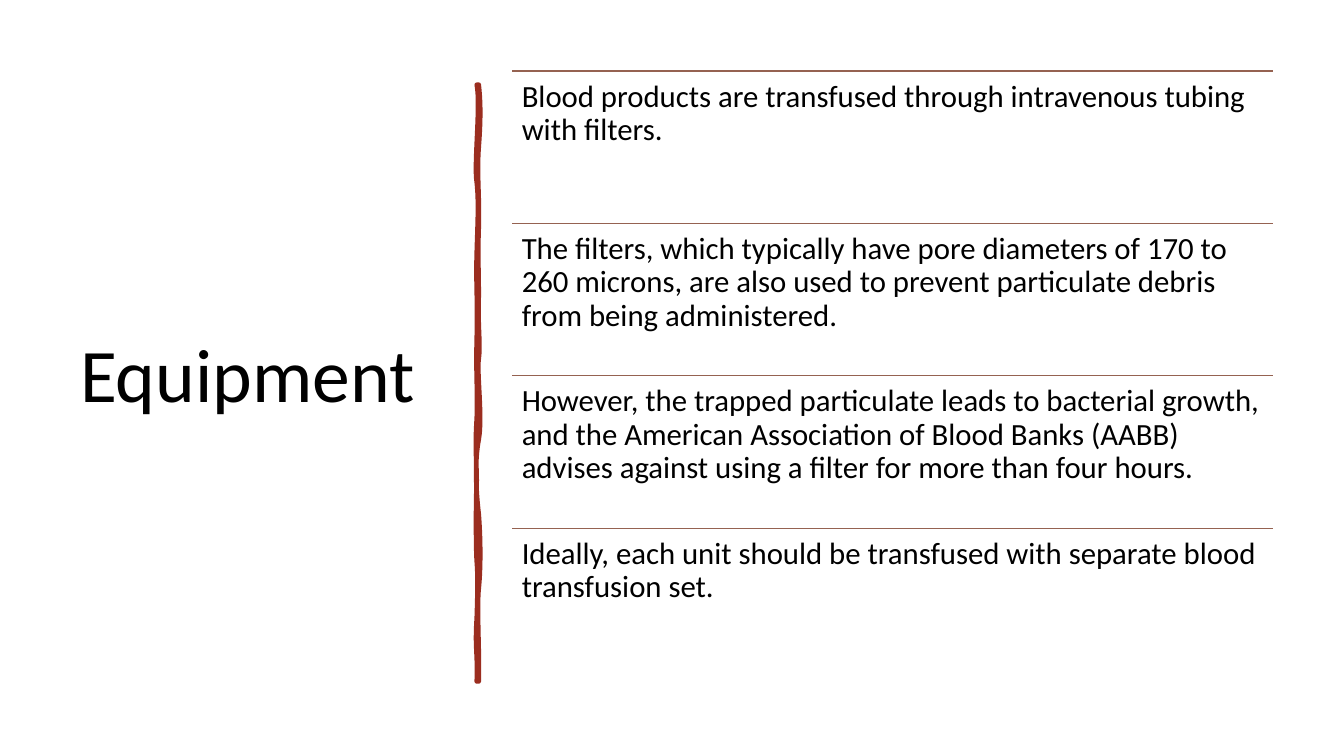
import dataclasses
import typing

import lxml.etree
import pptx
import pptx.dml.color
import pptx.enum.shapes
import pptx.enum.text
import pptx.oxml.ns
import pptx.util

Cm = pptx.util.Cm
Pt = pptx.util.Pt
RGB = pptx.dml.color.RGBColor
qn = pptx.oxml.ns.qn


@dataclasses.dataclass(frozen=True)
class Theme:
    font: str = "Calibri"
    ink: RGB = RGB(0x00, 0x00, 0x00)
    brush: RGB = RGB(0x9B, 0x2D, 0x1F)
    rule: RGB = RGB(0x95, 0x62, 0x51)
    title: float = 54
    body: float = 22


class Box(typing.NamedTuple):
    left: float
    top: float
    width: float
    height: float


class Bend(typing.NamedTuple):
    """One cubic curve of the bar, in hundredths of an inch."""
    x1: int
    y1: int
    x2: int
    y2: int
    x: int
    y: int


THEME = Theme()
TITLE = Box(1.77, 1.76, 9.5, 15.52)
FIRST = Box(12.91, 1.79, 19.18, 3.84)
INSET = 0.24
POINTS = [
    "Blood products are transfused through intravenous tubing with filters.",
    "The filters, which typically have pore diameters of 170 to 260 microns, "
    "are also used to prevent particulate debris from being administered.",
    "However, the trapped particulate leads to bacterial growth, and the American "
    "Association of Blood Banks (AABB) advises against using a filter for more "
    "than four hours.",
    "Ideally, each unit should be transfused with separate blood transfusion set.",
]

# Hand-drawn bar: an outline and a slightly different filled body
LEFT, RIGHT, TOP, FOOT = 473, 475, 84, 676
CLOSE = Bend(474, 84, 474, 84, RIGHT, TOP)
EDGE = [
    Bend(477, 102, 477, 119, 475, 146), Bend(473, 173, 476, 195, 475, 226),
    Bend(474, 257, 475, 262, 475, 294), Bend(474, 325, 477, 342, 475, 356),
    Bend(473, 370, 479, 414, 475, 436), Bend(471, 457, 472, 484, 475, 510),
    Bend(477, 536, 477, 564, 475, 584), Bend(473, 603, 476, 650, 475, 676),
    Bend(474, 676, 473, 676, 473, 676), Bend(474, 646, 471, 644, 473, 613),
    Bend(474, 583, 474, 570, 473, 557), Bend(472, 544, 472, 495, 473, 477),
    Bend(473, 459, 471, 445, 473, 415), Bend(474, 386, 472, 373, 473, 335),
    Bend(474, 298, 472, 281, 473, 250), Bend(474, 218, 475, 200, 473, 181),
    Bend(470, 163, 477, 104, 473, 84), CLOSE,
]
BODY = [
    Bend(475, 115, 472, 125, 475, 152), Bend(477, 179, 474, 197, 475, 208),
    Bend(476, 220, 474, 255, 475, 294), Bend(476, 333, 473, 343, 475, 362),
    Bend(477, 381, 477, 397, 475, 430), Bend(472, 463, 475, 474, 475, 516),
    Bend(475, 557, 474, 553, 475, 578), Bend(476, 603, 474, 647, 475, 676),
    Bend(474, 675, 473, 675, 473, 676), Bend(470, 649, 474, 632, 473, 613),
    Bend(472, 595, 475, 569, 473, 539), Bend(471, 510, 476, 500, 473, 471),
    Bend(470, 442, 477, 420, 473, 386), Bend(469, 351, 474, 325, 473, 300),
    Bend(471, 275, 471, 259, 473, 238), Bend(474, 216, 474, 185, 473, 164),
    Bend(471, 143, 475, 121, 473, 84), CLOSE,
]


def add_part(parent: typing.Any, tag: str, **attrs: str) -> typing.Any:
    return lxml.etree.SubElement(parent, qn(tag), attrs)


def add_dot(parent: typing.Any, x: int, y: int) -> None:
    add_part(parent, "a:pt", x=str(x - LEFT), y=str(y - TOP))


def add_loop(parent: typing.Any, bends: list[Bend], **paint: str) -> None:
    """Write one closed loop of curves."""
    loop = add_part(parent, "a:path", w=str(RIGHT - LEFT), h=str(FOOT - TOP), **paint)
    add_dot(add_part(loop, "a:moveTo"), RIGHT, TOP)
    for bend in bends:
        curve = add_part(loop, "a:cubicBezTo")
        add_dot(curve, bend.x1, bend.y1)
        add_dot(curve, bend.x2, bend.y2)
        add_dot(curve, bend.x, bend.y)
    add_part(loop, "a:close")


def draw_bar(shapes: typing.Any) -> None:
    pen = shapes.build_freeform(RIGHT, TOP, scale=Cm(2.54) / 100)
    pen.add_line_segments([(RIGHT, FOOT), (LEFT, FOOT), (LEFT, TOP)], close=True)
    bar = pen.convert_to_shape()
    bar.shadow.inherit = False
    bar.fill.solid()
    bar.fill.fore_color.rgb = THEME.brush
    bar.line.color.rgb = THEME.brush
    bar.line.width = Pt(3.25)
    # Swap the straight sides for curves
    loops = next(bar.element.iter(qn("a:pathLst")))
    for loop in list(loops):
        loops.remove(loop)
    add_loop(loops, EDGE, fill="none")
    add_loop(loops, BODY, stroke="0")


def add_text(shapes: typing.Any, box: Box, words: str, size: float,
             inset: float, anchor: pptx.enum.text.MSO_ANCHOR) -> None:
    frame = shapes.add_textbox(*map(Cm, box)).text_frame
    frame.word_wrap = True
    frame.vertical_anchor = anchor
    frame.margin_left = frame.margin_right = Cm(inset)
    frame.margin_top = frame.margin_bottom = Cm(inset)
    para = frame.paragraphs[0]
    para.line_spacing = 0.9
    run = para.add_run()
    run.text = words
    run.font.name = THEME.font
    run.font.size = Pt(size)
    run.font.color.rgb = THEME.ink


def add_rule(shapes: typing.Any, box: Box) -> None:
    rule = shapes.add_connector(
        pptx.enum.shapes.MSO_CONNECTOR.STRAIGHT, Cm(box.left), Cm(box.top),
        Cm(box.left + box.width), Cm(box.top))
    rule.line.color.rgb = THEME.rule
    rule.line.width = Pt(1)
    add_part(rule.element.find(qn("p:spPr")), "a:effectLst")


def main() -> None:
    deck = pptx.Presentation()
    deck.slide_width, deck.slide_height = Cm(33.87), Cm(19.05)
    shapes = deck.slides.add_slide(deck.slide_layouts[6]).shapes

    # Title
    add_text(shapes, TITLE, "Equipment", THEME.title, 0.25,
             pptx.enum.text.MSO_ANCHOR.MIDDLE)

    # Dividing bar
    draw_bar(shapes)

    # Ruled list
    for row, words in enumerate(POINTS):
        box = FIRST._replace(top=FIRST.top + row * FIRST.height)
        add_rule(shapes, box)
        add_text(shapes, box, words, THEME.body, INSET,
                 pptx.enum.text.MSO_ANCHOR.TOP)

    deck.save("out.pptx")


if __name__ == "__main__":
    main()
